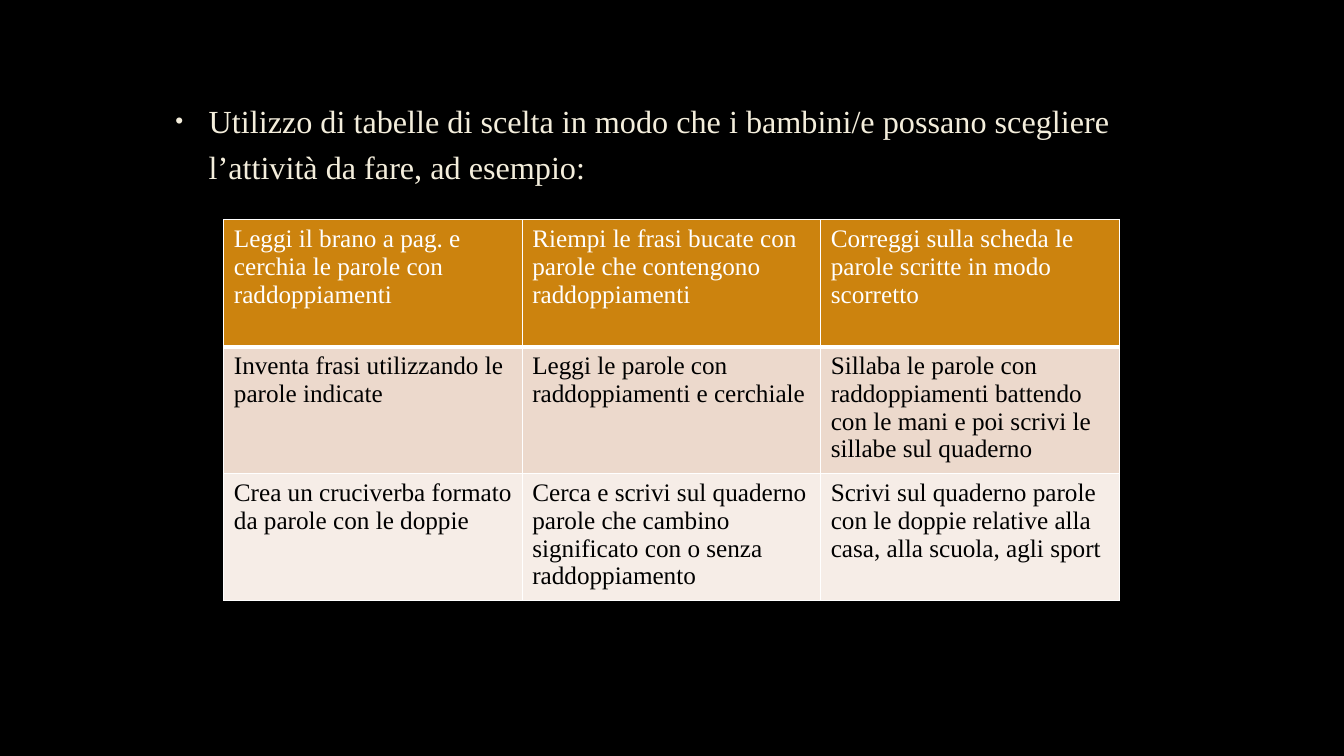
from dataclasses import dataclass

from lxml import etree
from pptx import Presentation
from pptx.dml.color import RGBColor
from pptx.enum.text import MSO_ANCHOR, MSO_AUTO_SIZE, PP_ALIGN
from pptx.oxml.ns import qn
from pptx.util import Emu, Pt

TOP = MSO_ANCHOR.TOP
NO_AUTOFIT = MSO_AUTO_SIZE.NONE
LEFT = PP_ALIGN.LEFT
EMU_PER_PX = 9144
TITLE_AND_CONTENT = 1


@dataclass(frozen=True)
class Theme:
    font: str = "Times New Roman"
    background: str = "000000"
    intro: str = "F4EEDC"
    border: str = "FFFFFF"
    row_fills: tuple = ("CC830E", "ECD9CC", "F6EDE7")
    row_inks: tuple = ("FFFFFF", "000000", "000000")
    intro_size: int = 23
    cell_size: int = 18
    thin: int = 1
    thick: int = 3


THEME = Theme()

INTRO = (
    "Utilizzo di tabelle di scelta in modo che i bambini/e possano scegliere "
    "l’attività da fare, ad esempio:"
)
ACTIVITIES = [
    [
        "Leggi il brano a pag. e cerchia le parole con raddoppiamenti",
        "Riempi le frasi bucate con parole che contengono raddoppiamenti",
        "Correggi sulla scheda le parole scritte in modo scorretto",
    ],
    [
        "Inventa frasi utilizzando le parole indicate",
        "Leggi le parole con raddoppiamenti e cerchiale",
        "Sillaba le parole con raddoppiamenti battendo con le mani e poi "
        "scrivi le sillabe sul quaderno",
    ],
    [
        "Crea un cruciverba formato da parole con le doppie",
        "Cerca e scrivi sul quaderno parole che cambino significato con o "
        "senza raddoppiamento",
        "Scrivi sul quaderno parole con le doppie relative alla casa, alla "
        "scuola, agli sport",
    ],
]


def px(length):
    return Emu(length * EMU_PER_PX)


def paint(fill, color):
    fill.solid()
    fill.fore_color.rgb = RGBColor.from_string(color)


def format_runs(paragraph, size, color):
    for run in paragraph.runs:
        run.font.name = THEME.font
        run.font.size = Pt(size)
        run.font.bold = False
        run.font.color.rgb = RGBColor.from_string(color)


def add_bullet(paragraph, color):
    properties = paragraph._p.get_or_add_pPr()
    properties.set("marL", str(px(38)))
    properties.set("indent", str(px(-33)))
    bullet_color = etree.SubElement(properties, qn("a:buClr"))
    etree.SubElement(bullet_color, qn("a:srgbClr"), val=color)
    etree.SubElement(properties, qn("a:buSzPct"), val="70000")
    etree.SubElement(properties, qn("a:buFont"), typeface="Arial")
    etree.SubElement(properties, qn("a:buChar"), char="•")


def fill_intro(body):
    body.left, body.top, body.width, body.height = map(px, (159, 88, 1050, 510))
    frame = body.text_frame
    frame.text = INTRO
    frame.word_wrap = True
    frame.auto_size = NO_AUTOFIT
    frame.vertical_anchor = TOP
    paragraph = frame.paragraphs[0]
    paragraph.alignment = LEFT
    paragraph.line_spacing = 1.2
    paragraph.space_before = Pt(0)
    paragraph.space_after = Pt(6)
    add_bullet(paragraph, THEME.intro)
    format_runs(paragraph, THEME.intro_size, THEME.intro)


def add_borders(cell, bottom_width):
    properties = cell._tc.get_or_add_tcPr()
    widths = {"L": THEME.thin, "R": THEME.thin, "T": THEME.thin, "B": bottom_width}
    for side, width in widths.items():
        line = etree.SubElement(properties, qn(f"a:ln{side}"), w=str(Pt(width)))
        solid = etree.SubElement(line, qn("a:solidFill"))
        etree.SubElement(solid, qn("a:srgbClr"), val=THEME.border)


def fill_cell(cell, activity, fill, ink, bottom_width):
    add_borders(cell, bottom_width)
    paint(cell.fill, fill)
    cell.vertical_anchor = TOP
    cell.text_frame.text = activity
    format_runs(cell.text_frame.paragraphs[0], THEME.cell_size, ink)


def add_choice_table(slide):
    row_count, column_count = len(ACTIVITIES), len(ACTIVITIES[0])
    row_height, column_width = 126, 296
    table = slide.shapes.add_table(
        row_count, column_count, px(222), px(218),
        px(column_width * column_count), px(row_height * row_count),
    ).table
    rows = zip(ACTIVITIES, THEME.row_fills, THEME.row_inks)
    for row, (activities, fill, ink) in enumerate(rows):
        bottom_width = THEME.thick if row == 0 else THEME.thin
        for column, activity in enumerate(activities):
            fill_cell(table.cell(row, column), activity, fill, ink, bottom_width)


def main():
    presentation = Presentation()
    presentation.slide_width = px(1333)
    presentation.slide_height = px(750)
    layout = presentation.slide_layouts[TITLE_AND_CONTENT]
    slide = presentation.slides.add_slide(layout)
    paint(slide.background.fill, THEME.background)
    title = slide.shapes.title.element
    title.getparent().remove(title)
    fill_intro(slide.placeholders[1])
    add_choice_table(slide)
    presentation.save("out.pptx")


if __name__ == "__main__":
    main()
